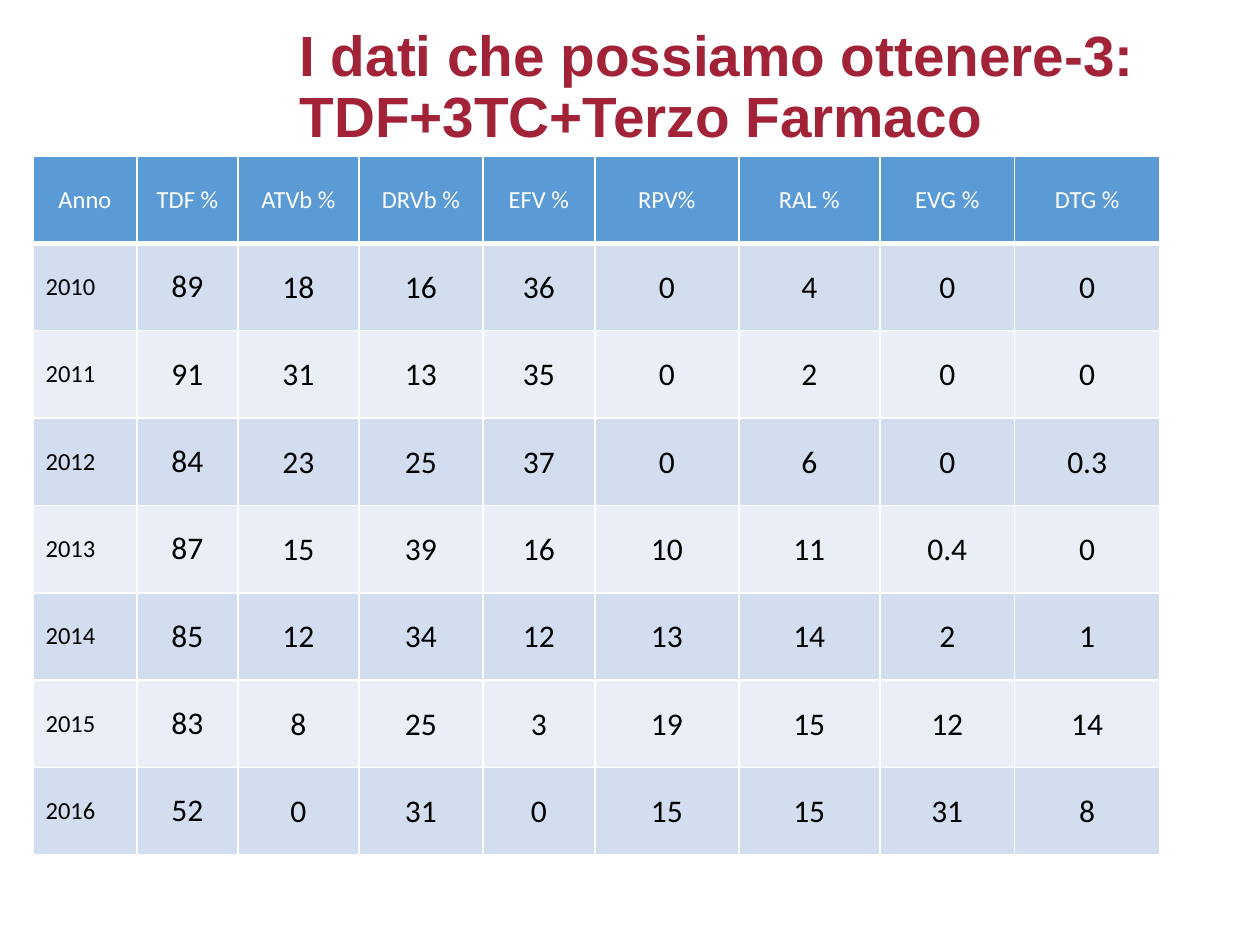
import pptx
import pptx.dml.color
import pptx.enum.text
import pptx.oxml.ns
import pptx.util
from lxml import etree

PX = 914400 // 126  # EMU per px

HEADERS = ["Anno", "TDF %", "ATVb %", "DRVb %", "EFV %", "RPV%", "RAL %", "EVG %", "DTG %"]
YEARS = [
    ["2010", "89", "18", "16", "36", "0", "4", "0", "0"],
    ["2011", "91", "31", "13", "35", "0", "2", "0", "0"],
    ["2012", "84", "23", "25", "37", "0", "6", "0", "0.3"],
    ["2013", "87", "15", "39", "16", "10", "11", "0.4", "0"],
    ["2014", "85", "12", "34", "12", "13", "14", "2", "1"],
    ["2015", "83", "8", "25", "3", "19", "15", "12", "14"],
    ["2016", "52", "0", "31", "0", "15", "15", "31", "8"],
]
COLUMN_WIDTHS = [104, 101, 121, 124, 112, 144, 141, 135, 145]
HEADER_FILL = "5B9BD5"
BAND_FILLS = ["D2DEEF", "EAEFF7"]


def color(value):
    return pptx.dml.color.RGBColor.from_string(value)


def format_text(frame, font, size, value, bold=False):
    for para in frame.paragraphs:
        for span in para.runs:
            span.font.name = font
            span.font.size = pptx.util.Pt(size)
            span.font.bold = bold
            span.font.color.rgb = color(value)


def set_borders(cell, value, bottom=1):
    properties = cell._tc.get_or_add_tcPr()
    for side, points in (("L", 1), ("R", 1), ("T", 1), ("B", bottom)):
        line = etree.SubElement(properties, pptx.oxml.ns.qn(f"a:ln{side}"),
                                w=str(pptx.util.Pt(points)))
        fill = etree.SubElement(line, pptx.oxml.ns.qn("a:solidFill"))
        etree.SubElement(fill, pptx.oxml.ns.qn("a:srgbClr"), val=value)


def place_title(page, left, top, width, height):
    title = page.shapes.title
    title.left, title.top = left * PX, top * PX
    title.width, title.height = width * PX, height * PX
    frame = title.text_frame
    frame.text = "I dati che possiamo ottenere-3:\vTDF+3TC+Terzo Farmaco"
    frame.word_wrap = True
    frame.auto_size = pptx.enum.text.MSO_AUTO_SIZE.NONE
    frame.vertical_anchor = pptx.enum.text.MSO_ANCHOR.MIDDLE
    frame.paragraphs[0].alignment = pptx.enum.text.PP_ALIGN.LEFT
    frame.paragraphs[0].line_spacing = 0.9
    format_text(frame, "Arial", 32.4, "A22338", bold=True)


def fill_cell(cell, text, row, column):
    is_header = row == 0
    cell.text_frame.text = text
    cell.vertical_anchor = pptx.enum.text.MSO_ANCHOR.MIDDLE
    is_year = column == 0 and not is_header
    align = pptx.enum.text.PP_ALIGN
    cell.text_frame.paragraphs[0].alignment = align.LEFT if is_year else align.CENTER
    format_text(cell.text_frame, "Calibri", 14 if is_header or is_year else 18,
                "FFFFFF" if is_header else "000000")
    # Drug percentages sit in cells with almost no margin
    if not is_header and column > 1:
        cell.margin_left = cell.margin_right = cell.margin_top = PX
        cell.margin_bottom = 0
    set_borders(cell, "FFFFFF", bottom=3 if is_header else 1)
    cell.fill.solid()
    cell.fill.fore_color.rgb = color(HEADER_FILL if is_header else BAND_FILLS[(row - 1) % 2])


def place_table(page, left, top, height):
    rows = [HEADERS] + YEARS
    table = page.shapes.add_table(len(rows), len(HEADERS), left * PX, top * PX,
                                  sum(COLUMN_WIDTHS) * PX, height * PX).table
    for column, width in zip(table.columns, COLUMN_WIDTHS):
        column.width = width * PX
    for row, texts in enumerate(rows):
        table.rows[row].height = height * PX // len(rows)
        for column, text in enumerate(texts):
            fill_cell(table.cell(row, column), text, row, column)


def main():
    deck = pptx.Presentation()
    deck.slide_width, deck.slide_height = pptx.util.Inches(10), pptx.util.Inches(7.5)
    page = deck.slides.add_slide(deck.slide_layouts[5])
    place_title(page, 287, 19, 937, 139)
    place_table(page, 33, 156, 699)
    deck.save("out.pptx")


if __name__ == "__main__":
    main()
